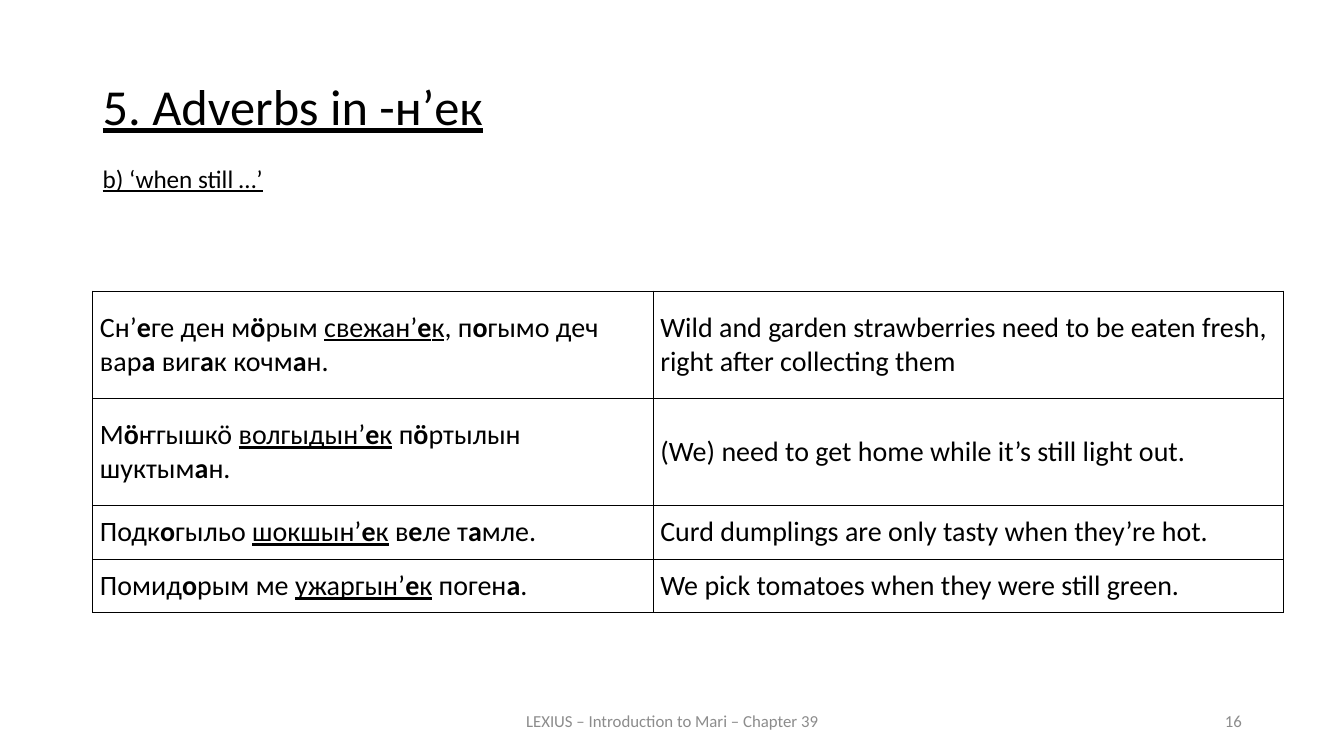
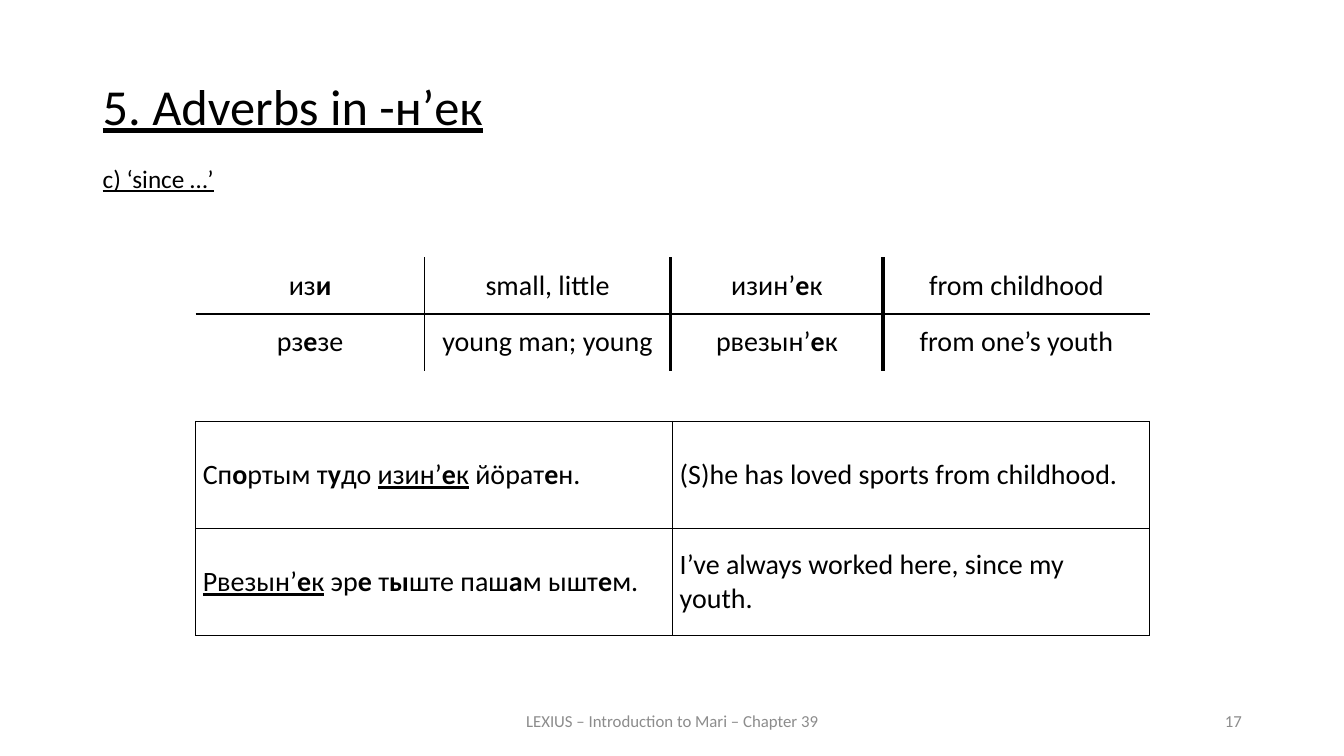
"""Build two grammar slides on Mari adverbs with example tables."""
from dataclasses import dataclass
from itertools import product

from lxml import etree
from pptx import Presentation
from pptx.dml.color import RGBColor
from pptx.enum import text
from pptx.oxml import ns
from pptx.util import Cm, Pt

LEFT, CENTER, RIGHT, JUSTIFY = (
    text.PP_ALIGN.LEFT, text.PP_ALIGN.CENTER, text.PP_ALIGN.RIGHT, text.PP_ALIGN.JUSTIFY)
TOP, MIDDLE = text.MSO_ANCHOR.TOP, text.MSO_ANCHOR.MIDDLE


@dataclass(frozen=True)
class Theme:
    font: str = "Calibri"
    ink: str = "000000"
    muted: str = "8C8C8C"
    title: int = 36
    table: int = 20
    subtitle: int = 18
    footer: int = 12
    thin: int = 1
    thick: int = 3


class Deck:
    def __init__(self, theme):
        self.theme = theme
        self.presentation = Presentation()
        self.presentation.slide_width = Cm(33.87)
        self.presentation.slide_height = Cm(19.05)
        self.slide = None

    def add_slide(self, title, subtitle, footer, number):
        theme = self.theme
        self.slide = self.presentation.slides.add_slide(self.presentation.slide_layouts[6])
        heading = self.add_text(title, (2.34, 1.93, 29.21, 2.11), theme.title, align=JUSTIFY)
        heading.line_spacing = 0.9
        self.add_text(footer, (11.23, 17.65, 11.43, 1.02), theme.footer, theme.muted, CENTER, MIDDLE)
        self.add_text(number, (23.93, 17.65, 7.62, 1.02), theme.footer, theme.muted, RIGHT, MIDDLE)
        self.add_text(subtitle, (2.34, 3.99, 24, 1.02), theme.subtitle)

    def add_text(self, content, box, size, color=None, align=LEFT, anchor=TOP):
        frame = self.slide.shapes.add_textbox(*map(Cm, box)).text_frame
        frame.word_wrap = True
        frame.vertical_anchor = anchor
        paragraph = frame.paragraphs[0]
        paragraph.alignment = align
        self.add_runs(paragraph, content, size, color)
        return paragraph

    def add_runs(self, paragraph, content, size, color=None):
        """Add text in which * toggles bold and _ toggles underline."""
        underlined = False
        for section in content.split("_"):
            bold = False
            for piece in section.split("*"):
                if piece:
                    run = paragraph.add_run()
                    run.text = piece
                    font = run.font
                    font.name, font.size = self.theme.font, Pt(size)
                    font.bold, font.underline = bold, underlined
                    font.color.rgb = RGBColor.from_string(color or self.theme.ink)
                bold = not bold
            underlined = not underlined

    def add_table(self, rows, origin, widths, heights, align=LEFT, vertical=None, horizontal=None):
        """Add a table; vertical and horizontal list the rule widths from edge to edge."""
        vertical = vertical or [self.theme.thin] * (len(widths) + 1)
        horizontal = horizontal or [self.theme.thin] * (len(heights) + 1)
        size = Cm(sum(widths)), Cm(sum(heights))
        table = self.slide.shapes.add_table(
            len(heights), len(widths), *map(Cm, origin), *size).table
        table.first_row = table.horz_banding = False
        for column, width in zip(table.columns, widths):
            column.width = Cm(width)
        for row, height in zip(table.rows, heights):
            row.height = Cm(height)
        for r, c in product(range(len(heights)), range(len(widths))):
            cell = table.cell(r, c)
            cell.vertical_anchor = MIDDLE
            cell.margin_left = cell.margin_right = Cm(0.18)
            cell.margin_top = cell.margin_bottom = 0
            paragraph = cell.text_frame.paragraphs[0]
            paragraph.alignment = align
            self.add_runs(paragraph, rows[r][c], self.theme.table)
            self.add_borders(cell, {"lnL": vertical[c], "lnR": vertical[c + 1],
                                    "lnT": horizontal[r], "lnB": horizontal[r + 1]})
            cell.fill.background()

    def add_borders(self, cell, borders):
        properties = cell._tc.get_or_add_tcPr()
        for tag, width in borders.items():
            line = etree.SubElement(properties, ns.qn(f"a:{tag}"), w=str(Pt(width)))
            if width:
                fill = etree.SubElement(line, ns.qn("a:solidFill"))
                etree.SubElement(fill, ns.qn("a:srgbClr"), val=self.theme.ink)
            else:
                etree.SubElement(line, ns.qn("a:noFill"))


TITLE = "_5. Adverbs in -н’ек_"
FOOTER = "LEXIUS – Introduction to Mari – Chapter 39"

WHEN_STILL = [
    ("Сн’*е*ге ден м*ӧ*рым _свежан’*е*к_, п*о*гымо деч вар*а* виг*а*к кочм*а*н.",
     "Wild and garden strawberries need to be eaten fresh, right after collecting them"),
    ("М*ӧ*ҥгышкӧ _волгыдын’*е*к_ п*ӧ*ртылын шуктым*а*н.",
     "(We) need to get home while it’s still light out."),
    ("Подк*о*гыльо _шокшын’*е*к_ в*е*ле т*а*мле.",
     "Curd dumplings are only tasty when they’re hot."),
    ("Помид*о*рым ме _ужаргын’*е*к_ поген*а*.",
     "We pick tomatoes when they were still green."),
]
SINCE_WORDS = [
    ("из*и*", "small, little", "изин’*е*к", "from childhood"),
    ("рз*е*зе", "young man; young", "рвезын’*е*к", "from one’s youth"),
]
SINCE_EXAMPLES = [
    ("Сп*о*ртым т*у*до _изин’*е*к_ йӧрат*е*н.", "(S)he has loved sports from childhood."),
    ("_Рвезын’*е*к_ эр*е* т*ы*ште паш*а*м ышт*е*м.", "I’ve always worked here, since my youth."),
]


def main():
    theme = Theme()
    deck = Deck(theme)

    deck.add_slide(TITLE, "_b) ‘when still …’_", FOOTER, "16")
    deck.add_table(WHEN_STILL, (2.34, 7.34), [14.12, 15.88], [2.7, 2.7, 1.35, 1.35])

    deck.add_slide(TITLE, "_c) ‘since …’_", FOOTER, "17")
    deck.add_table(SINCE_WORDS, (4.93, 6.48), [5.77, 6.2, 5.36, 6.71], [1.43] * 2, CENTER,
                   vertical=[0, theme.thin, theme.thick, theme.thick, 0],
                   horizontal=[0, theme.thin, 0])
    deck.add_table(SINCE_EXAMPLES, (4.93, 10.62), [12.02] * 2, [2.7] * 2)

    deck.presentation.save("out.pptx")


if __name__ == "__main__":
    main()
